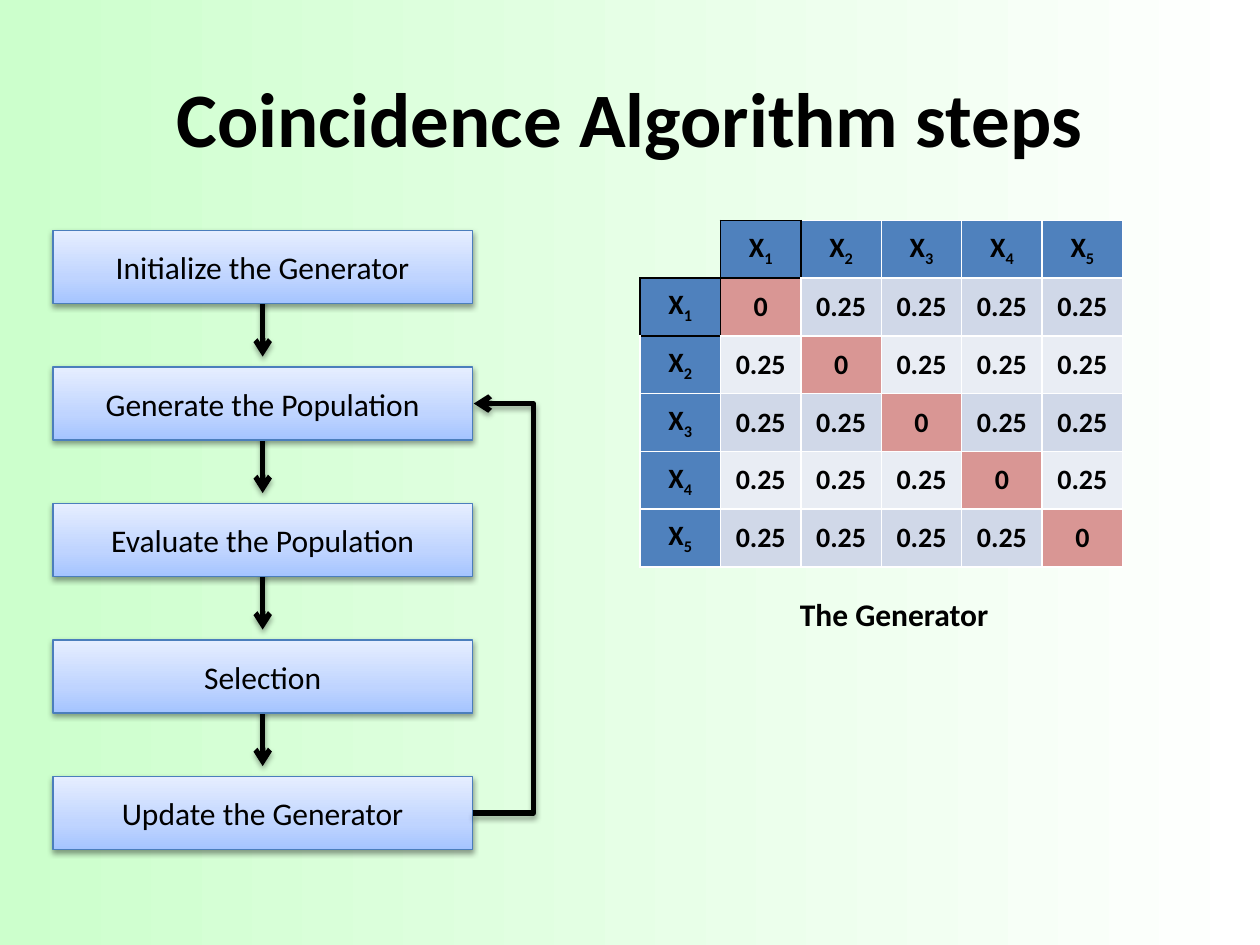
import pptx
import pptx.dml.color
import pptx.enum.shapes
import pptx.enum.text
import pptx.oxml.ns
import pptx.util
from lxml import etree

Inches = pptx.util.Inches
Pt = pptx.util.Pt
ALIGN = pptx.enum.text.PP_ALIGN
CONNECTOR = pptx.enum.shapes.MSO_CONNECTOR

STEPS = ["Initialize the Generator", "Generate the Population",
         "Evaluate the Population", "Selection", "Update the Generator"]
STEP_LEFT, STEP_TOP, STEP_WIDTH, STEP_HEIGHT = 0.42, 1.83, 3.33, 0.58
STEP_PITCH = 13 / 12
LOOP_REACH = 0.49
VARIABLES = 5
BLACK_EDGED = {(0, 1), (1, 0)}
SIDES = {"lnL": (0, -1), "lnR": (0, 1), "lnT": (-1, 0), "lnB": (1, 0)}


def color(value):
    return pptx.dml.color.RGBColor.from_string(value)


def add_node(parent, tag, **attributes):
    node = etree.SubElement(parent, pptx.oxml.ns.qn(tag))
    for name, value in attributes.items():
        node.set(name, str(value))
    return node


class Slide:
    """Holds the style and the current page, and draws each kind of element."""

    font = "Calibri"
    ink = "000000"
    head_fill = "4F81BD"
    zero_fill = "D99694"
    band_fills = ("E9EDF4", "D0D8E8")
    step_stops = [(0, "A4C4FF"), (35, "BFD4FF"), (100, "E6EEFF")]
    page_stops = [(0, "CCFFCC"), (100, "FFFFFF")]

    def __init__(self, deck):
        self.page = deck.slides.add_slide(deck.slide_layouts[6])
        self.shapes = self.page.shapes
        self.gradient(self.page, self.page.background.fill, self.page_stops, 0, 87)

    def gradient(self, owner, fill, stops, angle, alpha=100):
        fill.gradient()
        fill.gradient_angle = angle
        stop_list = owner.element.xpath(".//a:gsLst")[0]
        for old_stop in list(stop_list):
            stop_list.remove(old_stop)
        for position, value in stops:
            stop = add_node(stop_list, "a:gs", pos=position * 1000)
            tint = add_node(stop, "a:srgbClr", val=value)
            if alpha < 100:
                add_node(tint, "a:alpha", val=alpha * 1000)

    def shadow(self, shape, distance, alpha):
        effects = add_node(shape.element.spPr, "a:effectLst")
        outer = add_node(effects, "a:outerShdw", blurRad=Pt(3.1), dist=Pt(distance),
                         dir=90 * 60000, rotWithShape=0)
        tint = add_node(outer, "a:srgbClr", val=self.ink)
        add_node(tint, "a:alpha", val=alpha * 1000)

    def style_text(self, para, size, bold=False, align=ALIGN.CENTER):
        para.alignment = align
        para.font.name = self.font
        para.font.size = Pt(size)
        para.font.bold = bold
        para.font.color.rgb = color(self.ink)

    def text(self, words, left, top, width, height, size, align, wrap):
        box = self.shapes.add_textbox(*map(Inches, (left, top, width, height)))
        frame = box.text_frame
        frame.word_wrap = wrap
        frame.vertical_anchor = pptx.enum.text.MSO_ANCHOR.MIDDLE
        frame.text = words
        self.style_text(frame.paragraphs[0], size, True, align)

    def step(self, words, top):
        box = self.shapes.add_shape(
            pptx.enum.shapes.MSO_SHAPE.RECTANGLE,
            *map(Inches, (STEP_LEFT, top, STEP_WIDTH, STEP_HEIGHT)))
        self.gradient(box, box.fill, self.step_stops, 90)
        box.line.color.rgb = color("4B7EBC")
        box.line.width = Pt(0.75)
        self.shadow(box, 1.6, 38)
        box.text_frame.vertical_anchor = pptx.enum.text.MSO_ANCHOR.MIDDLE
        box.text_frame.text = words
        self.style_text(box.text_frame.paragraphs[0], 18)
        return box

    def style_arrow(self, arrow):
        arrow.line.color.rgb = color(self.ink)
        arrow.line.width = Pt(3)
        add_node(arrow.element.xpath(".//a:ln")[0], "a:tailEnd", type="arrow")
        self.shadow(arrow, 1.8, 35)

    def down_arrow(self, x, top, length):
        arrow = self.shapes.add_connector(
            CONNECTOR.STRAIGHT, *map(Inches, (x, top, x, top + length)))
        self.style_arrow(arrow)

    def loop(self, start, end):
        right = start.left + start.width
        arrow = self.shapes.add_connector(
            CONNECTOR.ELBOW, right, start.top + start.height // 2,
            right, end.top + end.height // 2)
        arrow.begin_connect(start, 3)
        arrow.end_connect(end, 3)
        arrow.width = Inches(0.01)
        bend = round(Inches(LOOP_REACH) / arrow.width * 100000)
        add_node(arrow.element.xpath(".//a:avLst")[0], "a:gd",
                 name="adj1", fmla=f"val {bend}")
        self.style_arrow(arrow)

    def borders(self, cell, row, column):
        properties = cell._tc.get_or_add_tcPr()
        for side, (down, across) in SIDES.items():
            black = BLACK_EDGED & {(row, column), (row + down, column + across)}
            edge = add_node(properties, f"a:{side}", w=Pt(1))
            if row == column == 0 and not black:
                add_node(edge, "a:noFill")
            else:
                fill = add_node(edge, "a:solidFill")
                add_node(fill, "a:srgbClr", val=self.ink if black else "FFFFFF")

    def cell(self, cell, row, column):
        self.borders(cell, row, column)
        cell.vertical_anchor = pptx.enum.text.MSO_ANCHOR.MIDDLE
        cell.margin_left = cell.margin_right = Inches(0.09)
        cell.margin_top = cell.margin_bottom = Inches(0.04)
        if row == column == 0:
            cell.fill.background()
            return
        para = cell.text_frame.paragraphs[0]
        if row == 0 or column == 0:
            fill = self.head_fill
            para.add_run().text = "X"
            index = para.add_run()
            index.text = str(row + column)
            index.font._element.set("baseline", "-25000")
        else:
            fill = self.zero_fill if row == column else self.band_fills[row % 2]
            para.add_run().text = "0" if row == column else "0.25"
        self.style_text(para, 16, True)
        cell.fill.solid()
        cell.fill.fore_color.rgb = color(fill)

    def generator_table(self, left, top, width, height):
        count = VARIABLES + 1
        table = self.shapes.add_table(
            count, count, *map(Inches, (left, top, width, height))).table
        table.first_row = table.horz_banding = False
        for index in range(count):
            table.columns[index].width = Inches(width / count)
            table.rows[index].height = Inches(height / count)
            for column in range(count):
                self.cell(table.cell(index, column), index, column)


def main():
    deck = pptx.Presentation()
    deck.slide_width, deck.slide_height = Inches(10), Inches(7.5)
    slide = Slide(deck)
    slide.text("Coincidence Algorithm steps", 0.5, 0.3, 9, 1.25, 44, ALIGN.CENTER, True)
    tops = [STEP_TOP + STEP_PITCH * index for index in range(len(STEPS))]
    for top in tops[:-1]:
        slide.down_arrow(STEP_LEFT + STEP_WIDTH / 2, top + 0.5, 0.5)
    steps = [slide.step(words, top) for words, top in zip(STEPS, tops)]
    slide.loop(steps[-1], steps[1])
    slide.generator_table(5.08, 1.75, 3.83, 2.75)
    slide.text("The Generator", 6.25, 4.67, 1.98, 0.4, 18, ALIGN.LEFT, False)
    deck.save("out.pptx")


if __name__ == "__main__":
    main()
